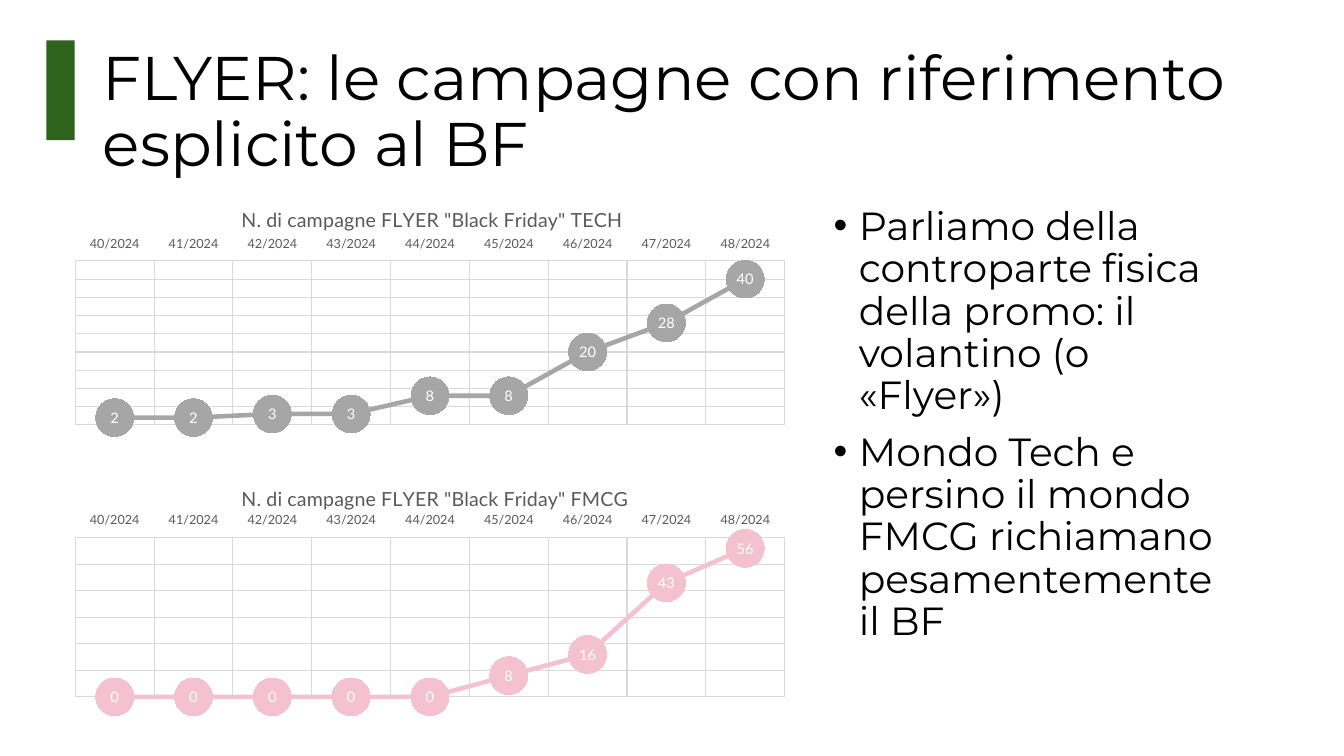
from lxml.etree import SubElement
from pptx import Presentation
from pptx.chart.data import CategoryChartData
from pptx.dml.color import RGBColor
from pptx.enum.chart import (XL_CHART_TYPE, XL_LABEL_POSITION, XL_MARKER_STYLE,
                             XL_TICK_LABEL_POSITION, XL_TICK_MARK)
from pptx.enum.shapes import MSO_SHAPE
from pptx.enum.text import MSO_ANCHOR, MSO_AUTO_SIZE
from pptx.oxml import parse_xml
from pptx.oxml.ns import nsdecls, qn
from pptx.util import Pt

PX = 9144
BLACK = RGBColor(0x00, 0x00, 0x00)
WHITE = RGBColor(0xFF, 0xFF, 0xFF)
GREEN = RGBColor(0x2E, 0x63, 0x1B)
GRAY = RGBColor(0xA6, 0xA6, 0xA6)
PINK = RGBColor(0xF3, 0xC1, 0xD0)
GRID = RGBColor(0xD9, 0xD9, 0xD9)
LABEL = RGBColor(0x59, 0x59, 0x59)
WEEKS = [f"{week}/2024" for week in range(40, 49)]
BULLETS = [
    "Parliamo della controparte fisica della promo: il volantino (o «Flyer»)",
    "Mondo Tech e persino il mondo FMCG richiamano pesamentemente il BF",
]


def box(*lengths):
    return [length * PX for length in lengths]


def set_font(font, name, size, color):
    font.name = name
    font.size = Pt(size)
    font.color.rgb = color
    font.bold = False


def set_line(line, color, width):
    line.color.rgb = color
    line.width = Pt(width)


def add_bar(s):
    sp = s.shapes.add_shape(MSO_SHAPE.RECTANGLE, *box(46, 40, 28, 99))
    sp.shadow.inherit = False
    sp.fill.solid()
    sp.fill.fore_color.rgb = GREEN
    sp.line.fill.background()


def add_text(p, text, size):
    p.line_spacing = 0.9
    r = p.add_run()
    r.text = text
    set_font(r.font, "Montserrat", size, BLACK)


def add_title(s, text):
    sp = s.shapes.title
    sp.left, sp.top, sp.width, sp.height = box(92, 40, 1150, 145)
    tf = sp.text_frame
    tf.word_wrap = True
    tf.auto_size = MSO_AUTO_SIZE.NONE
    tf.vertical_anchor = MSO_ANCHOR.MIDDLE
    p = tf.paragraphs[0]
    p.alignment = 1
    add_text(p, text, 44)


def add_bullets(s, texts):
    tf = s.shapes.add_textbox(*box(817, 200, 425, 476)).text_frame
    tf.word_wrap = True
    for i, text in enumerate(texts):
        p = tf.add_paragraph() if i else tf.paragraphs[0]
        pPr = p._p.get_or_add_pPr()
        pPr.set("marL", str(25 * PX))
        pPr.set("indent", str(-25 * PX))
        SubElement(pPr, qn("a:buFont")).set("typeface", "Arial")
        SubElement(pPr, qn("a:buChar")).set("char", "•")
        if i:
            p.space_before = Pt(10)
        add_text(p, text, 28)


def set_layout(parent, index, **values):
    for old in parent.findall(qn("c:layout")):
        parent.remove(old)
    target = '<c:layoutTarget val="inner"/>' if "w" in values else ""
    modes = '<c:xMode val="edge"/><c:yMode val="edge"/>'
    sizes = "".join(f'<c:{key} val="{value}"/>' for key, value in values.items())
    parent.insert(index, parse_xml(
        f'<c:layout {nsdecls("c")}><c:manualLayout>{target}{modes}{sizes}'
        '</c:manualLayout></c:layout>'))


def style_axes(chart, maximum, unit):
    weeks, counts = chart.category_axis, chart.value_axis
    counts.minimum_scale = 0
    counts.maximum_scale = maximum
    counts.major_unit = unit
    counts.visible = False
    weeks.major_tick_mark = XL_TICK_MARK.NONE
    weeks.tick_label_position = XL_TICK_LABEL_POSITION.HIGH
    set_font(weeks.tick_labels.font, "Lato", 9, LABEL)
    set_line(weeks.format.line, GRID, 0.75)
    for axis in (weeks, counts):
        axis.has_major_gridlines = True
        set_line(axis.major_gridlines.format.line, GRID, 0.75)


def style_series(series, color):
    series.smooth = False
    set_line(series.format.line, color, 3.25)
    marker = series.marker
    marker.style = XL_MARKER_STYLE.CIRCLE
    marker.size = 27
    marker.format.fill.solid()
    marker.format.fill.fore_color.rgb = color
    marker.format.line.fill.background()
    labels = series.data_labels
    labels.show_value = True
    labels.position = XL_LABEL_POSITION.CENTER
    labels.number_format = "0"
    labels.number_format_is_linked = False
    set_font(labels.font, "Lato", 10.5, WHITE)


def add_line_chart(s, top, sector, values, color, maximum, unit, plot_y, plot_h):
    data = CategoryChartData(number_format="0")
    data.categories = WEEKS
    data.add_series("Series 1", values)
    chart = s.shapes.add_chart(XL_CHART_TYPE.LINE_MARKERS,
                               *box(60, top, 733, 248), data).chart
    set_font(chart.font, "Lato", 10, BLACK)
    chart.has_legend = False
    chart.has_title = True
    r = chart.chart_title.text_frame.paragraphs[0].add_run()
    r.text = f'N. di campagne FLYER "Black Friday" {sector}'
    set_font(r.font, "Lato", 14, LABEL)
    set_layout(chart.chart_title._element, 1, x=0.24, y=0.06)
    set_layout(chart._chartSpace.chart.plotArea, 0,
               x=0.02, y=plot_y, w=0.96, h=plot_h)
    style_axes(chart, maximum, unit)
    chart.plots[0].vary_by_categories = False
    style_series(chart.plots[0].series[0], color)


def main():
    prs = Presentation()
    prs.slide_width, prs.slide_height = box(1333, 750)
    s = prs.slides.add_slide(prs.slide_layouts[5])
    add_bar(s)
    add_title(s, "FLYER: le campagne con riferimento esplicito al BF")
    add_bullets(s, BULLETS)
    add_line_chart(s, 185, "TECH", [2, 2, 3, 3, 8, 8, 20, 28, 40],
                   GRAY, 45, 5, 0.3, 0.66)
    add_line_chart(s, 462, "FMCG", [0, 0, 0, 0, 0, 8, 16, 43, 56],
                   PINK, 60, 10, 0.29, 0.64)
    prs.save("out.pptx")


if __name__ == "__main__":
    main()
